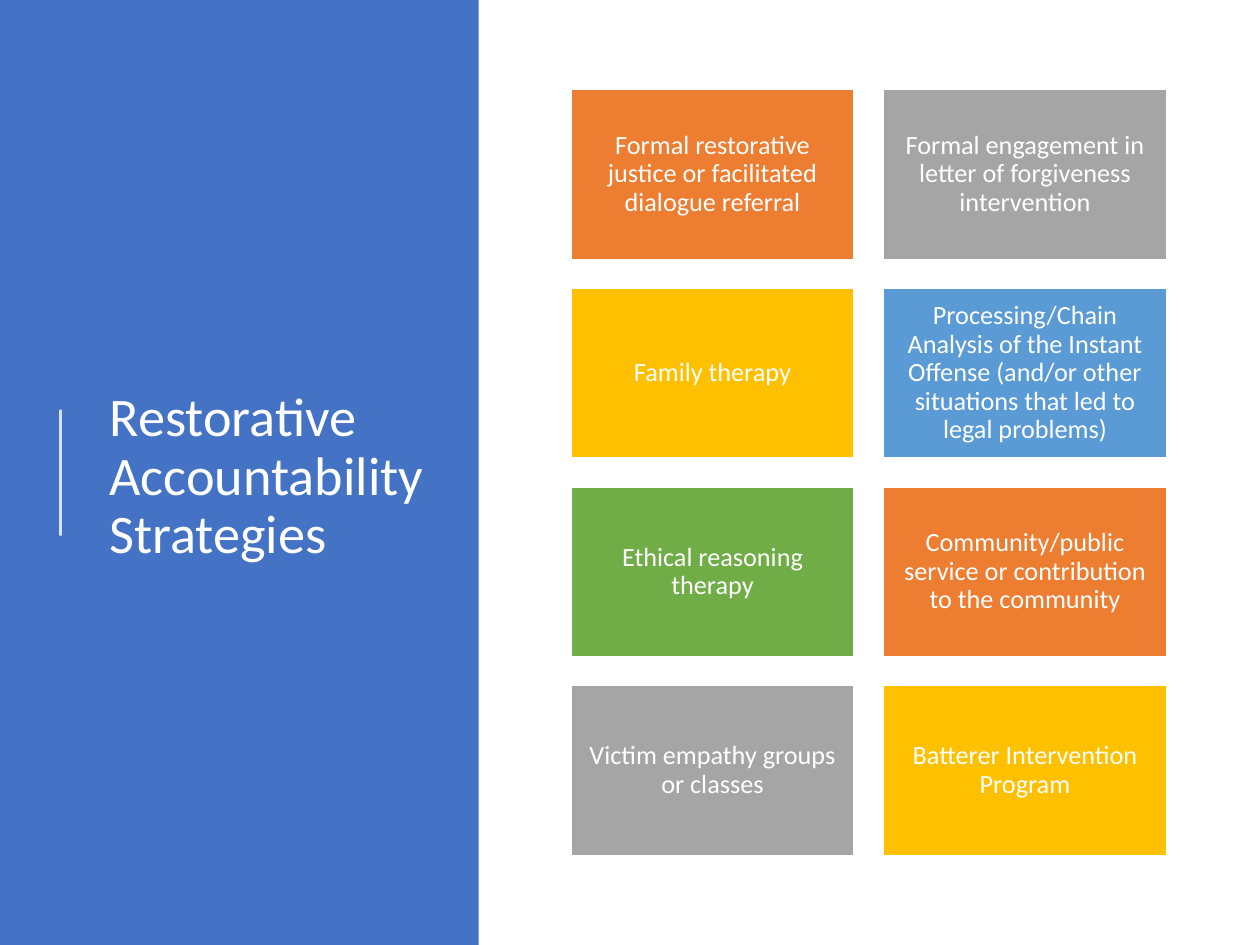
"""Build the Restorative Accountability Strategies slide."""
from lxml import etree
from pptx import Presentation
from pptx.dml.color import RGBColor
from pptx.enum import shapes, text
from pptx.oxml import ns
from pptx.util import Inches, Pt

FONT = "Calibri"
COLORS = {
    "white": "FFFFFF",
    "panel": "4472C4",
    "orange": "ED7D31",
    "gray": "A5A5A5",
    "gold": "FFC000",
    "blue": "5B9BD5",
    "green": "70AD47",
}
STRATEGIES = [
    ("Formal restorative justice or facilitated dialogue referral", "orange"),
    ("Formal engagement in letter of forgiveness intervention", "gray"),
    ("Family therapy", "gold"),
    ("Processing/Chain Analysis of the Instant Offense "
     "(and/or other situations that led to legal problems)", "blue"),
    ("Ethical reasoning therapy", "green"),
    ("Community/public service or contribution to the community", "orange"),
    ("Victim empathy groups or classes", "gray"),
    ("Batterer Intervention Program", "gold"),
]
COLUMNS = 2
ROWS = len(STRATEGIES) // COLUMNS
GRID_LEFT, GRID_TOP = 4.53, 0.71
LAST_ROW_TOP = 5.44
TILE_WIDTH, TILE_HEIGHT = 2.25, 1.35
COLUMN_STEP = 2.48
ROW_STEP = (LAST_ROW_TOP - GRID_TOP) / (ROWS - 1)


def color(name):
    return RGBColor.from_string(COLORS[name])


def add_rectangle(slide, left, top, width, height, fill):
    rectangle = slide.shapes.add_shape(
        shapes.MSO_SHAPE.RECTANGLE,
        Inches(left), Inches(top), Inches(width), Inches(height))
    rectangle.shadow.inherit = False
    rectangle.fill.solid()
    rectangle.fill.fore_color.rgb = color(fill)
    rectangle.line.fill.background()
    return rectangle


def write_text(shape, wording, size, alignment):
    frame = shape.text_frame
    frame.text = wording
    frame.word_wrap = True
    frame.auto_size = text.MSO_AUTO_SIZE.NONE
    frame.vertical_anchor = text.MSO_ANCHOR.MIDDLE
    paragraph = frame.paragraphs[0]
    paragraph.alignment = alignment
    paragraph.line_spacing = 0.9
    paragraph.font.name = FONT
    paragraph.font.size = Pt(size)
    paragraph.font.color.rgb = color("white")
    return frame


def add_title(slide, wording):
    title = slide.shapes.title
    title.left, title.top = Inches(0.77), Inches(0.78)
    title.width, title.height = Inches(2.76), Inches(6.02)
    write_text(title, wording, 31, text.PP_ALIGN.LEFT)
    panel = add_rectangle(slide, 0, 0, 3.8, 7.5, "panel")
    title.element.addprevious(panel.element)


def add_accent_line(slide):
    connector = slide.shapes.add_connector(
        shapes.MSO_CONNECTOR.STRAIGHT,
        Inches(0.48), Inches(4.25), Inches(0.48), Inches(3.25))
    connector.line.width = Pt(1.5)
    connector.line.color.rgb = color("white")
    properties = connector.element.spPr
    fill_color = properties.find(".//" + ns.qn("a:srgbClr"))
    etree.SubElement(fill_color, ns.qn("a:alpha"), val="80000")
    etree.SubElement(properties, ns.qn("a:effectLst"))


def add_tile(slide, index, wording, fill):
    row, column = divmod(index, COLUMNS)
    tile = add_rectangle(
        slide, GRID_LEFT + column * COLUMN_STEP, GRID_TOP + row * ROW_STEP,
        TILE_WIDTH, TILE_HEIGHT, fill)
    tile.line.color.rgb = color("white")
    tile.line.width = Pt(1)
    frame = write_text(tile, wording, 15, text.PP_ALIGN.CENTER)
    frame.margin_left = frame.margin_right = Inches(0.06)
    frame.margin_top = frame.margin_bottom = Inches(0.06)


def main():
    presentation = Presentation()
    presentation.slide_width = Inches(10)
    presentation.slide_height = Inches(7.5)
    slide = presentation.slides.add_slide(presentation.slide_layouts[5])
    add_title(slide, "Restorative Accountability Strategies")
    add_accent_line(slide)
    for index, (wording, fill) in enumerate(STRATEGIES):
        add_tile(slide, index, wording, fill)
    presentation.save("out.pptx")


if __name__ == "__main__":
    main()
